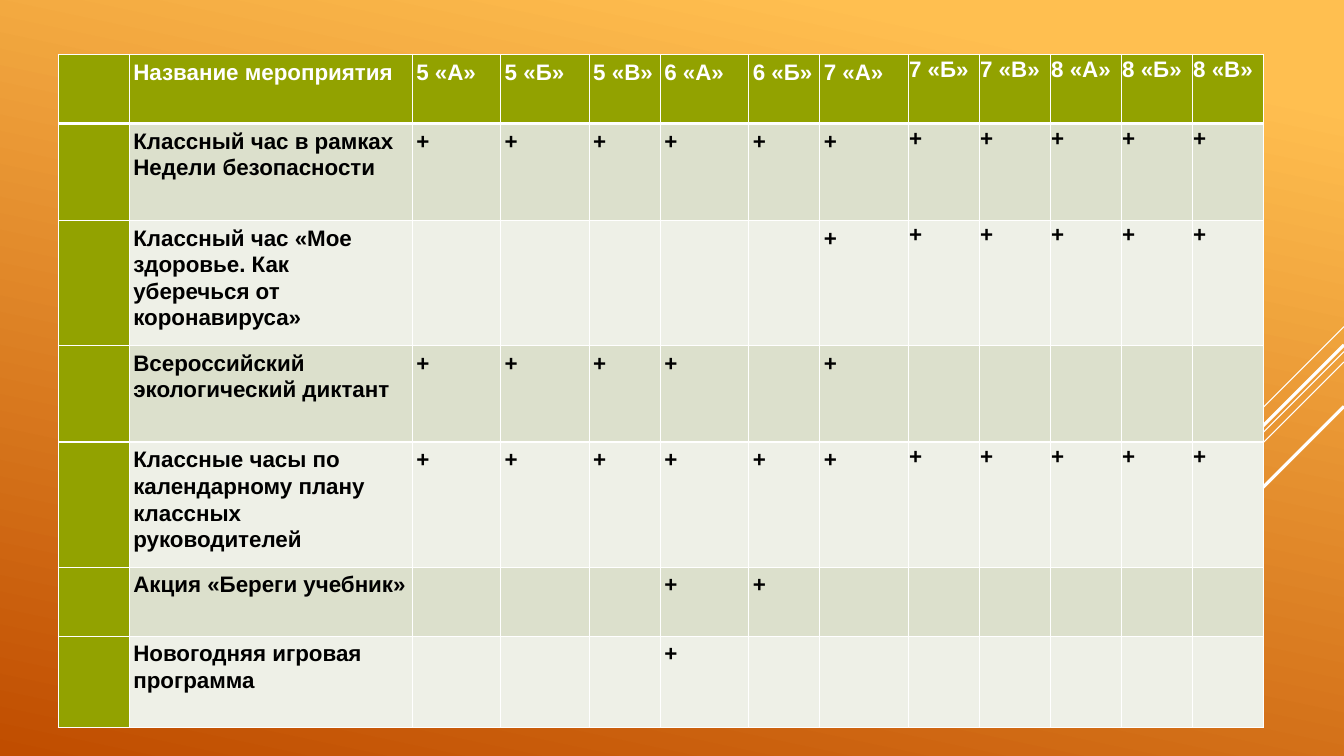
"""Build a slide with a table of school events by class."""
from dataclasses import dataclass
from typing import Any

from lxml import etree
from pptx import Presentation
from pptx.dml.color import RGBColor
from pptx.enum.shapes import MSO_CONNECTOR
from pptx.oxml.ns import qn
from pptx.slide import Slide
from pptx.table import _Cell
from pptx.util import Cm, Pt

STRAIGHT = MSO_CONNECTOR.STRAIGHT

COLORS = {
    "glow": "FFBF50",
    "ember": "C04D00",
    "white": "FFFFFF",
    "black": "000000",
    "olive": "92A200",
    "odd": "DCE0CC",
    "even": "EEF0E7",
}
SLIDE_WIDTH, SLIDE_HEIGHT = 33.87, 19.05
TABLE_LEFT, TABLE_TOP = 1.47, 1.37
NARROW, WIDE, NAME = 1.79, 2.23, 7.13
COLUMN_WIDTHS = [NARROW, NAME, WIDE, WIDE, NARROW, WIDE, NARROW, WIDE] + [NARROW] * 5
FIRST_TIGHT_COLUMN = 8
HEADER_HEIGHT = 1.74
HEADER = ["", "Название мероприятия", "5 «А»", "5 «Б»", "5 «В»", "6 «А»", "6 «Б»",
          "7 «А»", "7 «Б»", "7 «В»", "8 «А»", "8 «Б»", "8 «В»"]
TABLE_FORMAT = {"first_row": False, "horz_banding": False}
FONT_FORMAT = {"name": "Arial", "size": Pt(16), "bold": True}
THIN_BORDER, HEADER_BORDER = 1, 3


@dataclass(frozen=True)
class Event:
    """An event and its marks, one character per class."""
    name: str
    marks: str
    height: float


@dataclass(frozen=True)
class Ray:
    """A diagonal that falls leftwards from the right edge."""
    top: float
    run: float
    weight: float


EVENTS = [
    Event("Классный час в рамках Недели безопасности", "+++++++++++", 2.44),
    Event("Классный час «Мое здоровье. Как уберечься от коронавируса»", ".....++++++", 3.15),
    Event("Всероссийский экологический диктант", "++++.+.....", 2.44),
    Event("Классные часы по календарному плану классных руководителей", "+++++++++++", 3.15),
    Event("Акция «Береги учебник»", "...++......", 1.74),
    Event("Новогодняя игровая программа", "...+.......", 2.31),
]
RAYS = [
    Ray(8.23, 2.54, 0.75),
    Ray(8.86, 8.28, 0.75),
    Ray(9.12, 5.27, 0.75),
    Ray(8.69, 4.85, 2.25),
    Ray(10.24, 3.53, 2.25),
]


def rgb(color: str) -> RGBColor:
    """Return the named colour."""
    return RGBColor.from_string(COLORS[color])


def apply_format(target: Any, values: dict[str, Any]) -> None:
    """Set each attribute of the target from the values."""
    for attribute, value in values.items():
        setattr(target, attribute, value)


def paint_background(slide: Slide) -> None:
    """Fill the slide with the orange gradient."""
    fill = slide.background.fill
    fill.gradient()
    fill.gradient_angle = 360 - 102
    for stop, position, color in zip(fill.gradient_stops, (0.1, 1), ("glow", "ember")):
        stop.position = position
        stop.color.rgb = rgb(color)


def draw_ray(slide: Slide, ray: Ray) -> None:
    """Draw one white diagonal."""
    line = slide.shapes.add_connector(
        STRAIGHT, Cm(SLIDE_WIDTH), Cm(ray.top),
        Cm(SLIDE_WIDTH - ray.run), Cm(ray.top + ray.run))
    line.line.color.rgb = rgb("white")
    line.line.width = Pt(ray.weight)
    etree.SubElement(line._element.spPr, qn("a:effectLst"))


def draw_borders(cell: _Cell, row: int) -> None:
    """Give a cell white borders, heavier below the header."""
    weights = {
        "lnL": THIN_BORDER,
        "lnR": THIN_BORDER,
        "lnT": HEADER_BORDER if row == 1 else THIN_BORDER,
        "lnB": HEADER_BORDER if row == 0 else THIN_BORDER,
    }
    properties = cell._tc.get_or_add_tcPr()
    for side, weight in weights.items():
        border = etree.SubElement(properties, qn(f"a:{side}"), w=str(Pt(weight)))
        solid = etree.SubElement(border, qn("a:solidFill"))
        etree.SubElement(solid, qn("a:srgbClr"), val=COLORS["white"])


def fill_cell(cell: _Cell, text: str, row: int, column: int) -> None:
    """Style a cell by its place in the table and write its text."""
    draw_borders(cell, row)
    banding = "odd" if row % 2 else "even"
    cell.fill.solid()
    cell.fill.fore_color.rgb = rgb("olive" if row == 0 or column == 0 else banding)
    if not text:
        return
    inset = Cm(0.02 if column >= FIRST_TIGHT_COLUMN else 0.1)
    sides = ("left", "top", "right", "bottom")
    apply_format(cell, {f"margin_{side}": inset for side in sides})
    cell.text = text
    paragraph = cell.text_frame.paragraphs[0]
    paragraph.line_spacing = 1.07
    font = paragraph.runs[0].font
    apply_format(font, FONT_FORMAT)
    font.color.rgb = rgb("black" if row else "white")


def draw_schedule(slide: Slide) -> None:
    """Draw the table of events."""
    heights = [HEADER_HEIGHT] + [event.height for event in EVENTS]
    schedule = slide.shapes.add_table(
        len(heights), len(COLUMN_WIDTHS), Cm(TABLE_LEFT), Cm(TABLE_TOP),
        Cm(sum(COLUMN_WIDTHS)), Cm(sum(heights))).table
    apply_format(schedule, TABLE_FORMAT)
    for column, width in zip(schedule.columns, COLUMN_WIDTHS):
        column.width = Cm(width)
    for row, height in zip(schedule.rows, heights):
        row.height = Cm(height)
    contents = [HEADER] + [
        ["", event.name, *event.marks.replace(".", " ")] for event in EVENTS]
    for row, texts in enumerate(contents):
        for column, text in enumerate(texts):
            fill_cell(schedule.cell(row, column), text.strip(), row, column)


def main() -> None:
    """Build and save the presentation."""
    presentation = Presentation()
    presentation.slide_width = Cm(SLIDE_WIDTH)
    presentation.slide_height = Cm(SLIDE_HEIGHT)
    slide = presentation.slides.add_slide(presentation.slide_layouts[6])
    paint_background(slide)
    for ray in RAYS:
        draw_ray(slide, ray)
    draw_schedule(slide)
    presentation.save("out.pptx")


if __name__ == "__main__":
    main()
